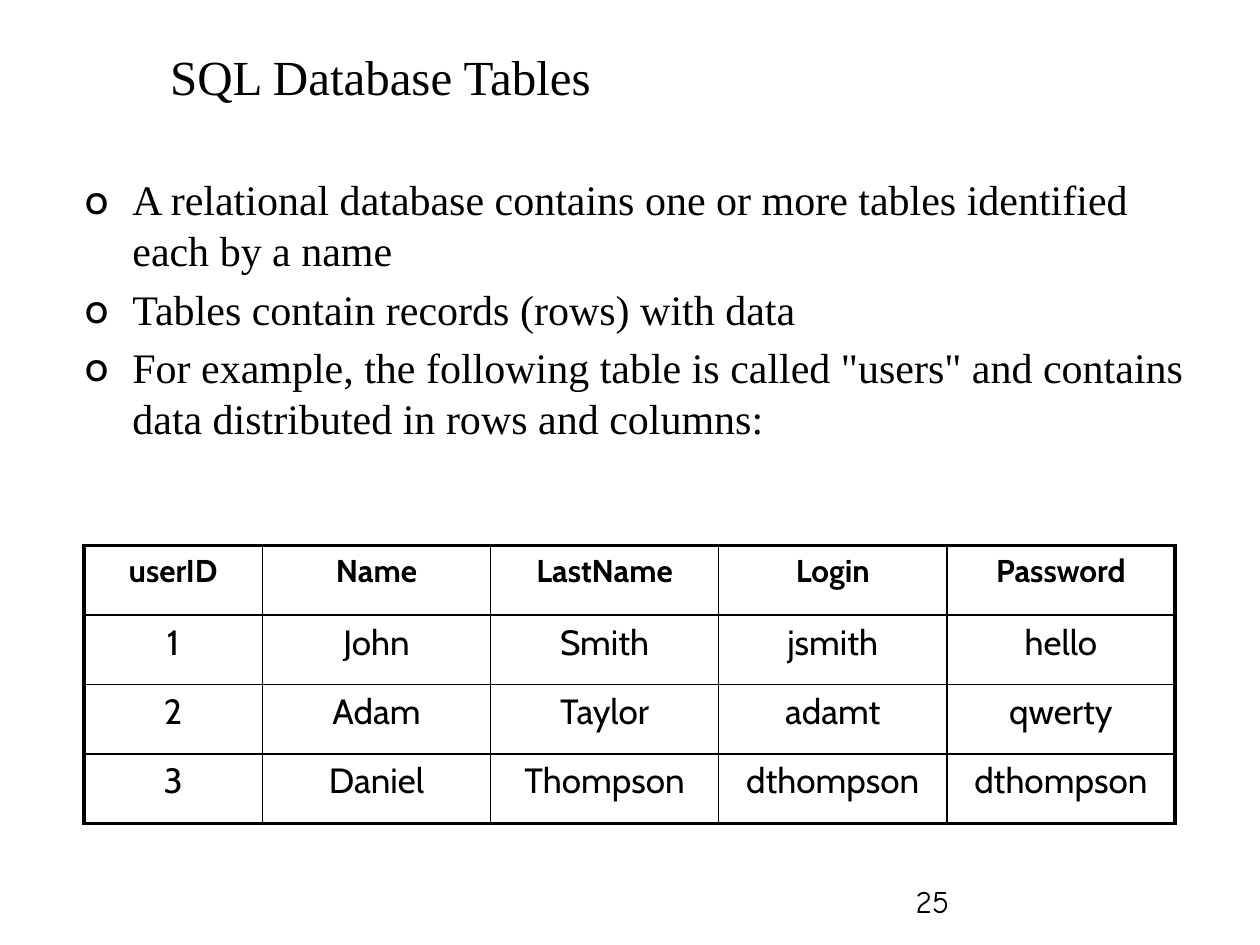
from lxml.etree import SubElement
from pptx import Presentation
from pptx.dml.color import RGBColor
from pptx.enum.text import MSO_ANCHOR, PP_ALIGN
from pptx.oxml.ns import qn
from pptx.util import Cm, Pt

BLACK = "000000"
SERIF = "Times New Roman"
SANS = "Cabin"
BULLETS = [
    "A relational database contains one or more tables identified each by a name",
    "Tables contain records (rows) with data",
    'For example, the following table is called "users" and contains '
    "data distributed in rows and columns:",
]
USERS = [
    ["userID", "Name", "LastName", "Login", "Password"],
    ["1", "John", "Smith", "jsmith", "hello"],
    ["2", "Adam", "Taylor", "adamt", "qwerty"],
    ["3", "Daniel", "Thompson", "dthompson", "dthompson"],
]


def color(hex_string):
    return RGBColor.from_string(hex_string)


def style_paragraph(para, size, font_name, bold=False):
    para.font.size = Pt(size)
    para.font.name = font_name
    para.font.bold = bold
    para.font.color.rgb = color(BLACK)


def add_text(page, left, top, width, height, lines, size, font_name):
    """Add a wrapped text box with one paragraph per line."""
    box = page.shapes.add_textbox(Cm(left), Cm(top), Cm(width), Cm(height))
    frame = box.text_frame
    frame.word_wrap = True
    frame.text = "\n".join(lines)
    for para in frame.paragraphs:
        style_paragraph(para, size, font_name)
    return frame


def add_bullet(para, indent):
    """Give the paragraph a hanging 'o' bullet and a gap above."""
    para.space_before = Pt(4.8)
    properties = para._p.get_or_add_pPr()
    properties.set("marL", str(Cm(indent)))
    properties.set("indent", str(-Cm(indent)))
    SubElement(properties, qn("a:buFont"), typeface=SANS)
    SubElement(properties, qn("a:buChar"), char="o")


def set_border(cell, side, width):
    properties = cell._tc.get_or_add_tcPr()
    line = SubElement(properties, qn(f"a:{side}"), w=str(Pt(width)))
    fill = SubElement(line, qn("a:solidFill"))
    SubElement(fill, qn("a:srgbClr"), val=BLACK)


def add_users_table(page):
    row_count, column_count = len(USERS), len(USERS[0])
    frame = page.shapes.add_table(
        row_count, column_count, Cm(1.69), Cm(11), Cm(22), Cm(5.6))
    table = frame.table
    table.first_row = table.horz_banding = False
    for index, column in enumerate(table.columns):
        column.width = Cm(4.6 if index else 3.6)
    for r, row in enumerate(USERS):
        for c, text in enumerate(row):
            cell = table.cell(r, c)
            cell.text = text
            para = cell.text_frame.paragraphs[0]
            para.alignment = PP_ALIGN.CENTER
            size = 20 if r else 18
            para.space_before = Pt(size * 0.2)
            style_paragraph(para, size, SANS, bold=r == 0)
            outer_sides = {
                "lnL": c == 0,
                "lnR": c == column_count - 1,
                "lnT": r == 0,
                "lnB": r == row_count - 1,
            }
            for side, is_outer in outer_sides.items():
                set_border(cell, side, 2.25 if is_outer else 1)
            cell.fill.background()


def main():
    deck = Presentation()
    deck.slide_width, deck.slide_height = Cm(25.4), Cm(19.05)
    page = deck.slides.add_slide(deck.slide_layouts[6])

    title = add_text(page, 3.18, 0.43, 19.25, 2.21,
                     ["SQL Database Tables"], 28, SERIF)
    title.vertical_anchor = MSO_ANCHOR.MIDDLE

    body = add_text(page, 1.47, 3.38, 22.86, 6.99, BULLETS, 24, SERIF)
    for para in body.paragraphs:
        add_bullet(para, 0.95)

    add_users_table(page)
    add_text(page, 18.21, 17.65, 5.92, 1.02, ["25"], 18, "Comic Neue")
    deck.save("out.pptx")


if __name__ == "__main__":
    main()
